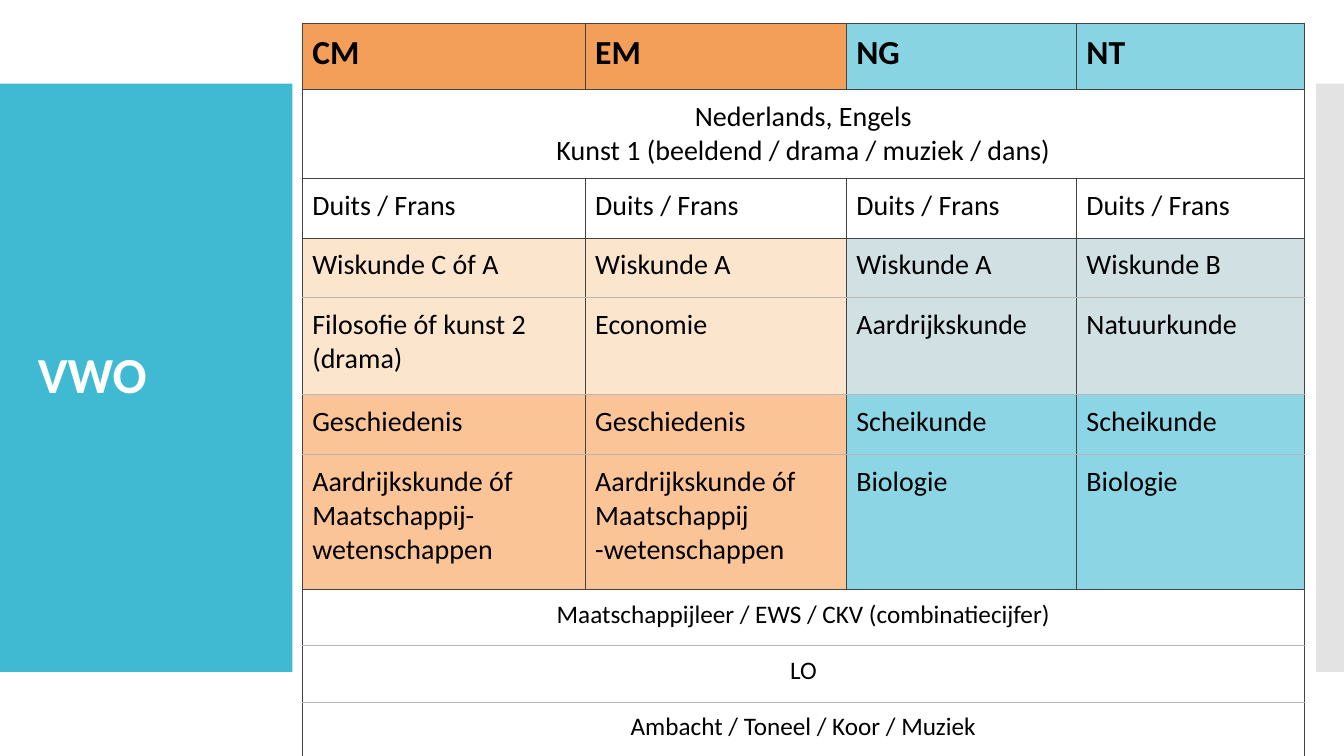
import dataclasses
import typing

import lxml.etree
import pptx
import pptx.dml.color
import pptx.enum.shapes
import pptx.enum.text
import pptx.oxml.ns
import pptx.util

Cm = pptx.util.Cm
Pt = pptx.util.Pt
RGBColor = pptx.dml.color.RGBColor
qn = pptx.oxml.ns.qn
PP_ALIGN = pptx.enum.text.PP_ALIGN

WHITE = RGBColor(0xFF, 0xFF, 0xFF)
BLACK = RGBColor(0x00, 0x00, 0x00)
TEAL = RGBColor(0x40, 0xBA, 0xD2)
SILVER = RGBColor(0xC8, 0xC8, 0xC8)
ORANGE = RGBColor(0xEE, 0x70, 0x08)
APRICOT = RGBColor(0xFA, 0xA8, 0x63)
CREAM = RGBColor(0xFC, 0xE5, 0xCD)
MIST = RGBColor(0xD0, 0xE0, 0xE3)
AQUA = RGBColor(0x8B, 0xD5, 0xE4)
DARK_EDGE = RGBColor(0x43, 0x43, 0x43)
SOFT_EDGE = RGBColor(0xB7, 0xB7, 0xB7)


@dataclasses.dataclass(frozen=True)
class Paint:
    color: RGBColor
    opacity: int = 100


@dataclasses.dataclass(frozen=True)
class Panel:
    left: float
    top: float
    width: float
    height: float
    paint: Paint
    outline: typing.Optional[RGBColor] = None


@dataclasses.dataclass(frozen=True)
class SubjectRow:
    height: float
    texts: tuple[str, ...]
    society: typing.Optional[Paint] = None
    nature: typing.Optional[Paint] = None
    size: int = 20
    bold: bool = False
    soft_below: bool = False


BACK_PANELS = (
    Panel(0, 2.11, 9.57, 14.82, Paint(TEAL)),
    Panel(32.81, 2.11, 1.06, 14.82, Paint(SILVER, 50)),
    Panel(7.37, 0.63, 5.43, 17.86, Paint(WHITE)),
)
RIGHT_STRIP = Panel(31.67, 0, 1.47, 18.49, Paint(WHITE), WHITE)

COLUMN_WIDTHS = (7.13, 6.58, 5.8, 5.74)
PLAIN = Paint(WHITE)
PALE = (Paint(CREAM), Paint(MIST))
STRONG = (Paint(APRICOT, 67), Paint(AQUA))
ROWS = (
    SubjectRow(1.68, ("CM", "EM", "NG", "NT"), Paint(ORANGE, 67), Paint(TEAL, 62), 24, True),
    SubjectRow(2.24, ("Nederlands, Engels\nKunst 1 (beeldend / drama / muziek / dans)",)),
    SubjectRow(1.5, ("Duits / Frans",) * 4, PLAIN, PLAIN),
    SubjectRow(1.5, ("Wiskunde C óf A", "Wiskunde A", "Wiskunde A", "Wiskunde B"),
               *PALE, soft_below=True),
    SubjectRow(2.45, ("Filosofie óf kunst 2 (drama)", "Economie", "Aardrijkskunde", "Natuurkunde"),
               *PALE, soft_below=True),
    SubjectRow(1.5, ("Geschiedenis", "Geschiedenis", "Scheikunde", "Scheikunde"),
               *STRONG, soft_below=True),
    SubjectRow(3.4, ("Aardrijkskunde óf Maatschappij- wetenschappen",
                     "Aardrijkskunde óf Maatschappij -wetenschappen", "Biologie", "Biologie"),
               *STRONG),
    SubjectRow(1.42, ("Maatschappijleer / EWS / CKV (combinatiecijfer)",), size=18, soft_below=True),
    SubjectRow(1.42, ("LO",), size=18, soft_below=True),
    SubjectRow(1.42, ("Ambacht / Toneel / Koor / Muziek",), size=18),
)


def apply_format(target: typing.Any, values: dict[str, typing.Any]) -> None:
    for name, value in values.items():
        setattr(target, name, value)


def apply_paint(fill: typing.Any, parent: typing.Any, paint: typing.Optional[Paint]) -> None:
    if paint is None:
        fill.background()
        return
    fill.solid()
    fill.fore_color.rgb = paint.color
    if paint.opacity < 100:
        color = parent.find(qn("a:solidFill")).find(qn("a:srgbClr"))
        lxml.etree.SubElement(color, qn("a:alpha"), val=str(paint.opacity * 1000))


def draw_panel(page: typing.Any, panel: Panel) -> typing.Any:
    box = page.shapes.add_shape(
        pptx.enum.shapes.MSO_SHAPE.RECTANGLE,
        Cm(panel.left), Cm(panel.top), Cm(panel.width), Cm(panel.height),
    )
    box.shadow.inherit = False
    apply_paint(box.fill, box.element.spPr, panel.paint)
    if panel.outline is None:
        box.line.fill.background()
    else:
        box.line.color.rgb = panel.outline
        box.line.width = Pt(0.85)
    return box


def write_text(frame: typing.Any, text: str, paragraph_format: dict[str, typing.Any],
               font_format: dict[str, typing.Any], color: RGBColor) -> None:
    frame.text = text
    for para in frame.paragraphs:
        apply_format(para, paragraph_format)
        for span in para.runs:
            apply_format(span.font, {"name": "Calibri", **font_format})
            span.font.color.rgb = color


def draw_title(page: typing.Any) -> None:
    title = page.shapes.title
    apply_format(title, {"left": Cm(0.7), "top": Cm(3.12), "width": Cm(8.19), "height": Cm(12.77)})
    apply_format(title.text_frame, {
        "word_wrap": True,
        "vertical_anchor": pptx.enum.text.MSO_ANCHOR.MIDDLE,
    })
    write_text(title.text_frame, "VWO", {"alignment": PP_ALIGN.LEFT, "line_spacing": 0.9},
               {"size": Pt(36), "bold": True}, WHITE)


def draw_borders(cell_properties: typing.Any, top: RGBColor, bottom: RGBColor) -> None:
    edges = {"a:lnL": DARK_EDGE, "a:lnR": DARK_EDGE, "a:lnT": top, "a:lnB": bottom}
    for position, (tag, color) in enumerate(edges.items()):
        edge = lxml.etree.Element(qn(tag), w=str(Pt(0.75)))
        solid = lxml.etree.SubElement(edge, qn("a:solidFill"))
        lxml.etree.SubElement(solid, qn("a:srgbClr"), val=str(color))
        cell_properties.insert(position, edge)


def draw_table(page: typing.Any) -> None:
    frame = page.shapes.add_table(
        len(ROWS), len(COLUMN_WIDTHS), Cm(7.62), Cm(0.58),
        Cm(sum(COLUMN_WIDTHS)), Cm(sum(row.height for row in ROWS)),
    )
    table = frame.table
    apply_format(table, {"first_row": False, "horz_banding": False})
    for column, width in zip(table.columns, COLUMN_WIDTHS):
        column.width = Cm(width)

    top = DARK_EDGE
    margins = {f"margin_{side}": Cm(0.25) for side in ("left", "top", "right", "bottom")}
    for row_index, row in enumerate(ROWS):
        table.rows[row_index].height = Cm(row.height)
        bottom = SOFT_EDGE if row.soft_below else DARK_EDGE
        merged = len(row.texts) == 1
        for column_index in range(len(COLUMN_WIDTHS)):
            cell = table.cell(row_index, column_index)
            apply_format(cell, margins)
            properties = cell.fill and cell._tc.get_or_add_tcPr()
            apply_paint(cell.fill, properties, row.society if column_index < 2 else row.nature)
            draw_borders(properties, top, bottom)
        if merged:
            table.cell(row_index, 0).merge(table.cell(row_index, len(COLUMN_WIDTHS) - 1))
        for column_index, text in enumerate(row.texts):
            write_text(
                table.cell(row_index, column_index).text_frame, text,
                {"alignment": PP_ALIGN.CENTER if merged else PP_ALIGN.LEFT},
                {"size": Pt(row.size), "bold": row.bold}, BLACK,
            )
        top = bottom


def main() -> None:
    deck = pptx.Presentation()
    apply_format(deck, {"slide_width": Cm(33.87), "slide_height": Cm(19.05)})
    page = deck.slides.add_slide(deck.slide_layouts[5])
    draw_title(page)
    for panel in BACK_PANELS:
        page.shapes.title.element.addprevious(draw_panel(page, panel).element)
    draw_panel(page, RIGHT_STRIP)
    draw_table(page)
    deck.save("out.pptx")


if __name__ == "__main__":
    main()
